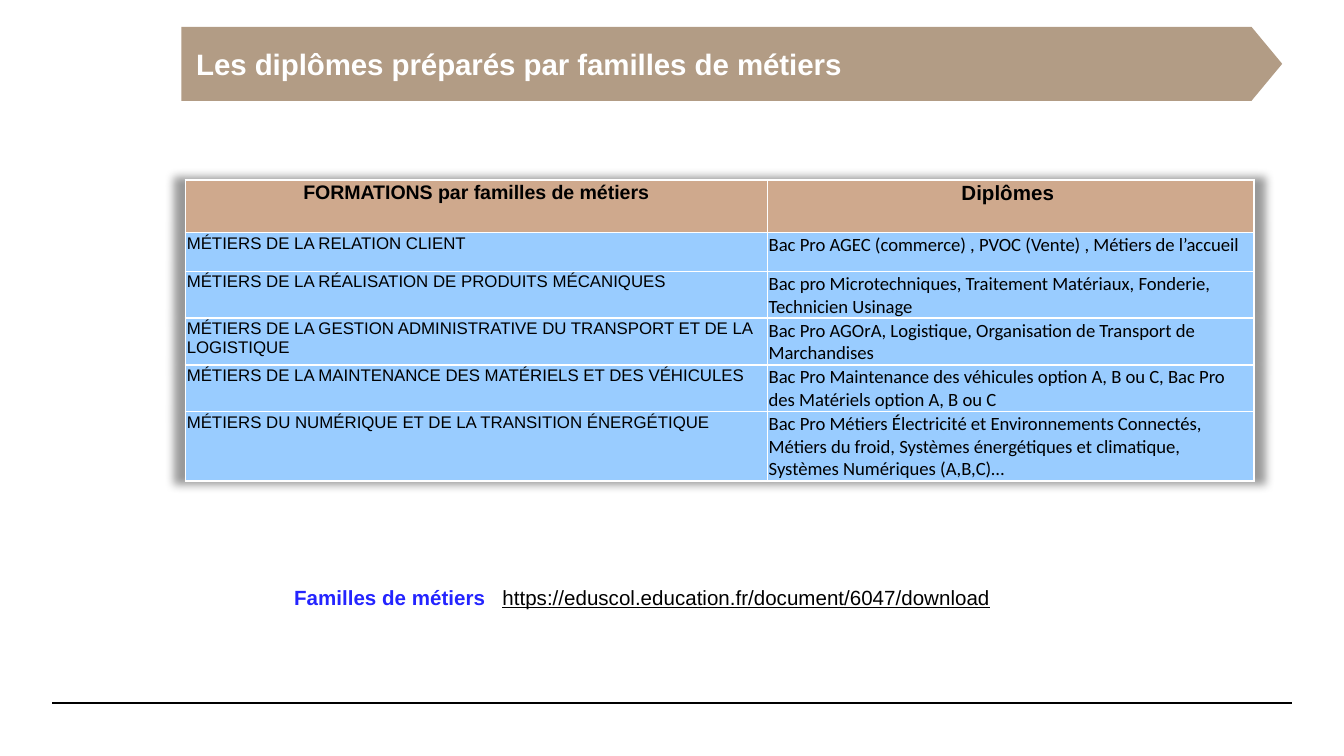
from dataclasses import dataclass

from lxml import etree
from pptx import Presentation
from pptx.dml.color import RGBColor
from pptx.enum.shapes import MSO_CONNECTOR, MSO_SHAPE
from pptx.enum.text import MSO_ANCHOR, MSO_AUTO_SIZE, PP_ALIGN
from pptx.oxml import parse_xml
from pptx.oxml.ns import nsdecls, qn
from pptx.util import Inches, Pt

PENTAGON = MSO_SHAPE.PENTAGON
STRAIGHT = MSO_CONNECTOR.STRAIGHT
MIDDLE = MSO_ANCHOR.MIDDLE
NO_FIT = MSO_AUTO_SIZE.NONE
CENTER, LEFT, JUSTIFY = PP_ALIGN.CENTER, PP_ALIGN.LEFT, PP_ALIGN.JUSTIFY


@dataclass(frozen=True)
class Theme:
    """Colours, fonts and type sizes of the slide."""
    black: str = "000000"
    white: str = "FFFFFF"
    banner: str = "B29C85"
    header: str = "CFA98D"
    row: str = "99CCFF"
    label: str = "2424FF"
    font: str = "Arial"
    detail_font: str = "Calibri"
    title_size: float = 15.75
    header_size: float = 10.5
    text_size: float = 11
    family_size: float = 9
    detail_size: float = 10


THEME = Theme()
HEADERS = ("FORMATIONS par familles de métiers", "Diplômes ")
FAMILIES = (
    ("MÉTIERS DE LA RELATION CLIENT",
     "Bac Pro AGEC (commerce) , PVOC (Vente) , Métiers de l’accueil"),
    ("MÉTIERS DE LA RÉALISATION DE PRODUITS MÉCANIQUES",
     "Bac pro Microtechniques, Traitement Matériaux, Fonderie, Technicien Usinage"),
    ("MÉTIERS DE LA GESTION ADMINISTRATIVE DU TRANSPORT ET DE LA LOGISTIQUE",
     "Bac Pro AGOrA, Logistique, Organisation de Transport de Marchandises"),
    ("MÉTIERS DE LA MAINTENANCE DES MATÉRIELS ET DES VÉHICULES",
     "Bac Pro Maintenance des véhicules option A, B ou C, "
     "Bac Pro des Matériels option A, B ou C"),
    ("MÉTIERS DU NUMÉRIQUE ET DE LA TRANSITION ÉNERGÉTIQUE",
     "Bac Pro Métiers Électricité et Environnements Connectés, Métiers du froid, "
     "Systèmes énergétiques et climatique, Systèmes Numériques (A,B,C)…"),
)


def add_text(p, text, size=THEME.text_size, font=THEME.font, color=THEME.black,
             bold=False, underline=False, align=LEFT):
    """Append a formatted run to a paragraph."""
    p.alignment = align
    r = p.add_run()
    r.text = text
    r.font.size = Pt(size)
    r.font.name = font
    r.font.bold = bold
    r.font.underline = underline
    r.font.color.rgb = RGBColor.from_string(color)


def set_fill(target, color):
    """Give a shape or a cell a solid fill."""
    target.fill.solid()
    target.fill.fore_color.rgb = RGBColor.from_string(color)


def add_rule(s, left, right, y):
    """Draw the horizontal rule at the foot of the slide."""
    line = s.shapes.add_connector(STRAIGHT, Inches(left), Inches(y),
                                  Inches(right), Inches(y))
    line.line.width = Pt(0.8)
    line.line.color.rgb = RGBColor.from_string(THEME.black)
    etree.SubElement(line._element.spPr, qn("a:effectLst"))


def add_banner(s, text, box):
    """Draw the arrow banner and set the title on it."""
    sp = s.shapes.add_shape(PENTAGON, *box)
    sp.adjustments[0] = 0.415
    sp.shadow.inherit = False
    set_fill(sp, THEME.banner)
    sp.line.fill.background()
    title = s.shapes.title
    title.left, title.top, title.width, title.height = box
    s.shapes._spTree.append(title._element)
    tf = title.text_frame
    tf.auto_size = NO_FIT
    tf.word_wrap = True
    tf.vertical_anchor = MIDDLE
    tf.margin_left = tf.margin_right = Inches(0.11)
    tf.margin_top = tf.margin_bottom = Inches(0.05)
    add_text(tf.paragraphs[0], text, size=THEME.title_size, color=THEME.white,
             bold=True, align=JUSTIFY)


def set_borders(cell, color):
    """Draw a one-point border on every side of a cell."""
    tc_pr = cell._tc.get_or_add_tcPr()
    for i, side in enumerate(("lnL", "lnR", "lnT", "lnB")):
        tc_pr.insert(i, parse_xml(
            f'<a:{side} {nsdecls("a")} w="12700"><a:solidFill>'
            f'<a:srgbClr val="{color}"/></a:solidFill></a:{side}>'))


def add_cell(cell, text, fill, **fmt):
    """Fill, frame and write one table cell."""
    set_fill(cell, fill)
    set_borders(cell, THEME.white)
    cell.margin_left = cell.margin_right = cell.margin_top = Inches(0.01)
    cell.margin_bottom = 0
    add_text(cell.text_frame.paragraphs[0], text, **fmt)


def add_shadow(table):
    """Put a soft, slightly enlarged shadow behind a table."""
    table._tbl.tblPr.insert(0, parse_xml(
        f'<a:effectLst {nsdecls("a")}><a:outerShdw blurRad="63500" sx="102000" '
        'sy="102000" algn="ctr" rotWithShape="0"><a:srgbClr val="000000">'
        '<a:alpha val="40000"/></a:srgbClr></a:outerShdw></a:effectLst>'))


def add_diploma_table(s, left, top, widths, header_height, row_height):
    """Build the table of trade families and their diplomas."""
    height = header_height + row_height * len(FAMILIES)
    table = s.shapes.add_table(len(FAMILIES) + 1, len(widths), Inches(left),
                               Inches(top), Inches(sum(widths)),
                               Inches(height)).table
    table.horz_banding = False
    add_shadow(table)
    for column, width in zip(table.columns, widths):
        column.width = Inches(width)
    for i, row in enumerate(table.rows):
        row.height = Inches(row_height if i else header_height)
    sizes = (THEME.header_size, THEME.text_size)
    for j, (text, size) in enumerate(zip(HEADERS, sizes)):
        add_cell(table.cell(0, j), text, THEME.header, size=size, bold=True,
                 align=CENTER)
    for i, (family, diplomas) in enumerate(FAMILIES, start=1):
        add_cell(table.cell(i, 0), family, THEME.row, size=THEME.family_size)
        add_cell(table.cell(i, 1), diplomas, THEME.row, size=THEME.detail_size,
                 font=THEME.detail_font)


def add_source(s, label, address, box, tab):
    """Write a label and, at a tab stop, the address it refers to."""
    tf = s.shapes.add_textbox(*box).text_frame
    tf.word_wrap = True
    p = tf.paragraphs[0]
    tabs = etree.SubElement(p._p.get_or_add_pPr(), qn("a:tabLst"))
    etree.SubElement(tabs, qn("a:tab"), pos=str(Inches(tab)), algn="l")
    add_text(p, label + "\t", color=THEME.label, bold=True)
    add_text(p, address, underline=True)


def main():
    """Build the slide and save it."""
    prs = Presentation()
    prs.slide_width = Inches(10)
    prs.slide_height = prs.slide_width * 9 // 16
    s = prs.slides.add_slide(prs.slide_layouts[5])
    add_rule(s, 0.39, 9.61, 5.23)
    add_diploma_table(s, 1.38, 1.34, (4.33, 3.62), 0.39, 0.29)
    add_banner(s, "Les diplômes préparés par familles de métiers",
               [Inches(v) for v in (1.35, 0.2, 8.19, 0.55)])
    add_source(s, "Familles de métiers",
               "https://eduscol.education.fr/document/6047/download",
               [Inches(v) for v in (2.09, 4.3, 7.01, 0.29)], 1.55)
    prs.save("out.pptx")


if __name__ == "__main__":
    main()
